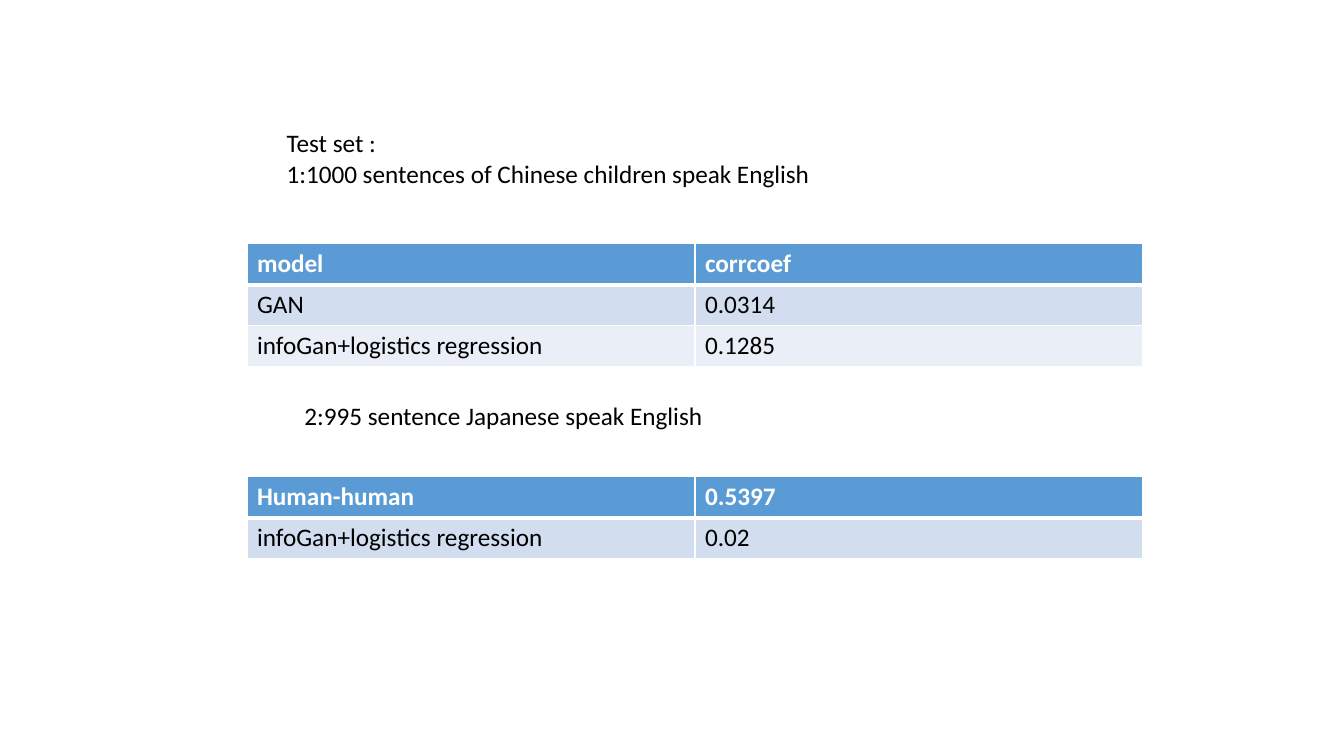
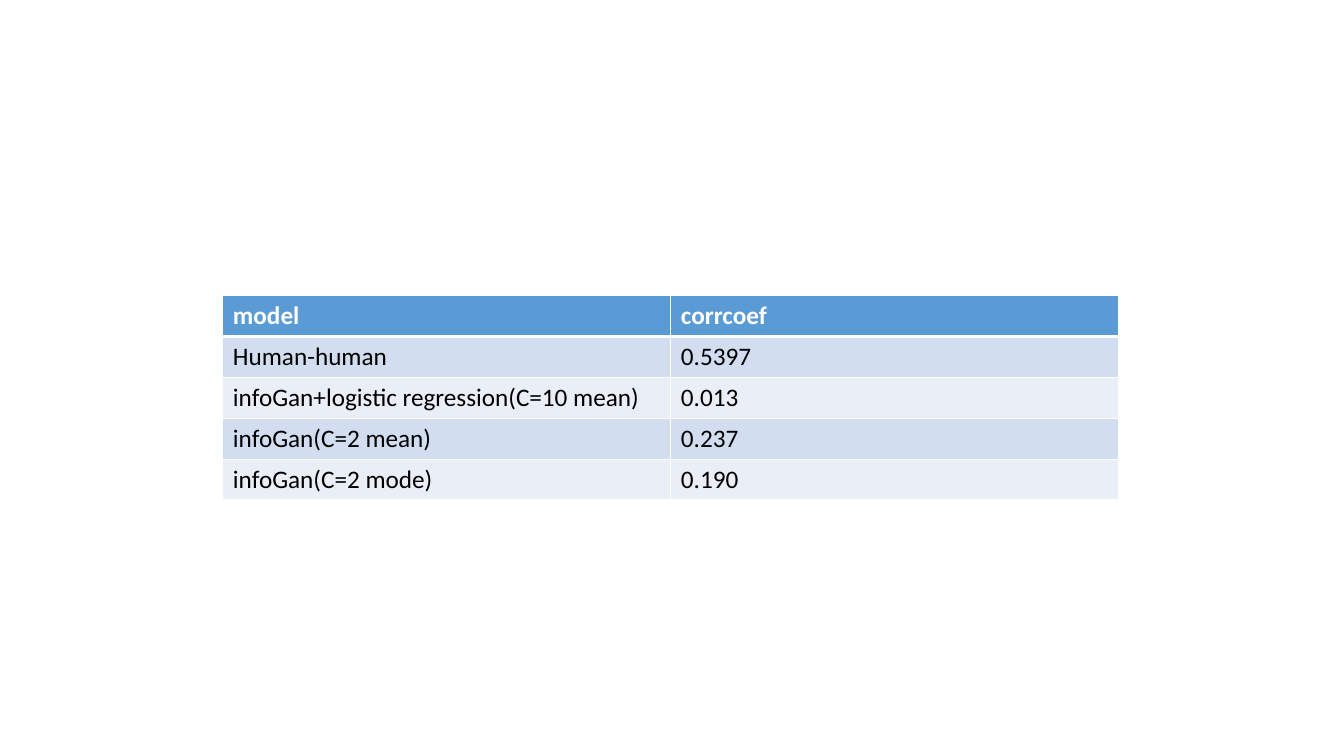
from lxml.etree import SubElement as Sub
from pptx import Presentation as Deck
from pptx.dml.color import RGBColor as Color
from pptx.oxml.ns import qn
from pptx.util import Inches, Pt

WHITE = Color(0xFF, 0xFF, 0xFF)
BLACK = Color(0x00, 0x00, 0x00)
HEAD = Color(0x5B, 0x9B, 0xD5)
BANDS = Color(0xD2, 0xDE, 0xEF), Color(0xEA, 0xEF, 0xF7)
FONT = "Calibri"
WIDE, HIGH = Inches(13.33), Inches(7.5)
GRID = 120
SPAN, ROW = 80, 6.5
MODEL = "model", "corrcoef"
HUMAN = "Human-human", "0.5397"


def place(left, top, width, height):
    col, row = WIDE / GRID, HIGH / GRID
    return [int(n) for n in (left * col, top * row, width * col, height * row)]


def write(frame, text, size=18, color=BLACK, bold=False):
    frame.text = text
    for para in frame.paragraphs:
        font = para.runs[0].font
        font.name, font.size, font.bold = FONT, Pt(size), bold
        font.color.rgb = color


def label(slide, text, box):
    frame = slide.shapes.add_textbox(*place(*box)).text_frame
    frame.word_wrap = True
    write(frame, text)


def edge(cell, side, width):
    props = cell._tc.get_or_add_tcPr()
    line = Sub(props, qn(f"a:ln{side}"), w=str(Pt(width)))
    fill = Sub(line, qn("a:solidFill"))
    Sub(fill, qn("a:srgbClr"), val=str(WHITE))


def table(slide, rows, left, top):
    box = place(left, top, SPAN, ROW * len(rows))
    grid = slide.shapes.add_table(len(rows), len(rows[0]), *box).table
    grid.first_row = grid.horz_banding = False
    for r, row in enumerate(rows):
        head = r == 0
        for c, text in enumerate(row):
            cell = grid.cell(r, c)
            write(cell.text_frame, text, color=WHITE if head else BLACK, bold=head)
            for side in "LRTB":
                thick = (r, side) in ((0, "B"), (1, "T"))
                edge(cell, side, 3 if thick else 1)
            cell.fill.solid()
            cell.fill.fore_color.rgb = HEAD if head else BANDS[(r - 1) % 2]


def tests(slide):
    label(slide, "Test set :\n1:1000 sentences of Chinese children speak English",
          (24.7, 19.5, 49, 11.3))
    table(slide, [MODEL, ("GAN", "0.0314"),
                  ("infoGan+logistics regression", "0.1285")], 22.05, 38.7)
    label(slide, "2:995 sentence Japanese speak English", (26.3, 62.7, 38, ROW))
    table(slide, [HUMAN, ("infoGan+logistics regression", "0.02")], 22.05, 75.7)


def models(slide):
    table(slide, [MODEL, HUMAN,
                  ("infoGan+logistic regression(C=10 mean)", "0.013"),
                  ("infoGan(C=2 mean)", "0.237"),
                  ("infoGan(C=2 mode)", "0.190")], 19.9, 46.9)


def main():
    deck = Deck()
    deck.slide_width, deck.slide_height = WIDE, HIGH
    blank = deck.slide_layouts.get_by_name("Blank")
    for build in (tests, models):
        build(deck.slides.add_slide(blank))
    deck.save("out.pptx")


if __name__ == "__main__":
    main()
